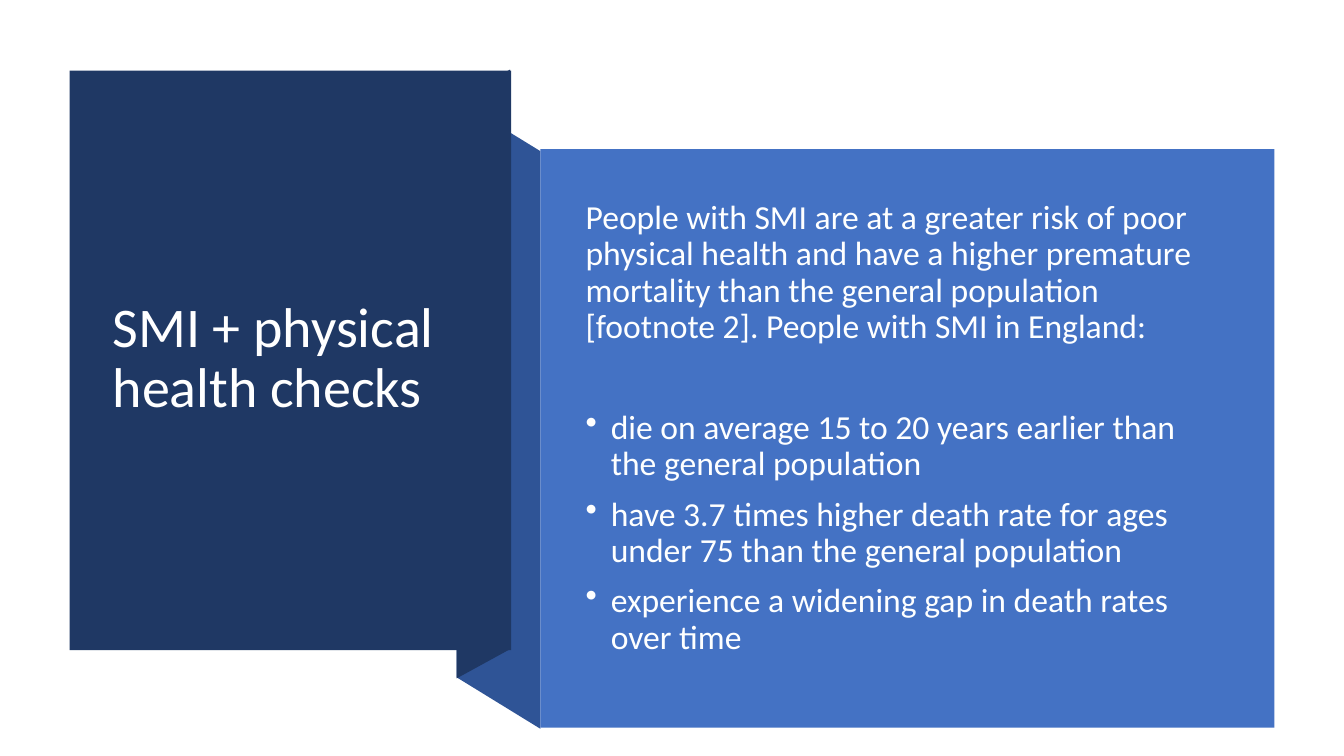
from pptx import Presentation
from pptx.dml.color import RGBColor
from pptx.enum.shapes import MSO_SHAPE
from pptx.enum.text import MSO_ANCHOR
from pptx.oxml.ns import qn
from pptx.util import Inches, Pt
from lxml.etree import SubElement

NAVY = RGBColor(0x1F, 0x38, 0x64)
FOLD = RGBColor(0x2F, 0x54, 0x96)
BLUE = RGBColor(0x44, 0x72, 0xC4)
WHITE = RGBColor(0xFF, 0xFF, 0xFF)
SOFT = RGBColor(0xFE, 0xFF, 0xFF)

TITLE = "SMI + physical health checks"
INTRO = ("People with SMI are at a greater risk of poor physical health and "
         "have a higher premature mortality than the general population "
         "[footnote 2]. People with SMI in England:")
FACTS = [
    "die on average 15 to 20 years earlier than the general population",
    "have 3.7 times higher death rate for ages under 75 than the general population",
    "experience a widening gap in death rates over time",
]


def paint(shape, color):
    shape.shadow.inherit = False
    shape.fill.solid()
    shape.fill.fore_color.rgb = color
    shape.line.fill.background()


def add_rect(slide, box, color):
    rect = slide.shapes.add_shape(MSO_SHAPE.RECTANGLE, *map(Inches, box))
    paint(rect, color)


def add_fold(slide, box, slant, color):
    left, top, width, height = box
    right, bottom = left + width, top + height
    rise, drop = max(-slant, 0), max(slant, 0)
    points = [(right, bottom - rise), (left, bottom - drop),
              (left, top + rise), (right, top + drop)]
    points = [(Inches(x), Inches(y)) for x, y in points]
    form = slide.shapes.build_freeform(*points[0])
    form.add_line_segments(points[1:], close=True)
    paint(form.convert_to_shape(), color)


def add_text(slide, box, lines, size, color):
    frame = slide.shapes.add_textbox(*map(Inches, box)).text_frame
    frame.word_wrap = True
    frame.vertical_anchor = MSO_ANCHOR.MIDDLE
    frame.text = "\n".join(lines)
    for para in frame.paragraphs:
        para.line_spacing = 0.9
        para.font.name = "Calibri"
        para.font.size = Pt(size)
        para.font.color.rgb = color
    return frame


def add_bullet(para):
    props = para._p.get_or_add_pPr()
    props.set("marL", str(Inches(0.25)))
    props.set("indent", str(Inches(-0.25)))
    mark = SubElement(props, qn("a:buChar"))
    mark.set("char", "•")
    props.remove(mark)
    props.insert_element_before(mark, "a:tabLst", "a:defRPr", "a:extLst")
    para.space_before = Pt(10)


def add_title(slide, box):
    left, top, width, height = box
    add_rect(slide, box, NAVY)
    add_text(slide, (left + 0.33, top + 0.37, width - 0.66, height - 0.76),
             [TITLE], 40, WHITE)


def add_body(slide, box):
    left, top, width, height = box
    add_rect(slide, box, BLUE)
    frame = add_text(slide, (left + 0.35, top + 0.4, width - 0.77, height - 1),
                     [INTRO] + FACTS, 24, SOFT)
    facts = frame.paragraphs[1:]
    for para in facts:
        add_bullet(para)
    facts[0].space_before = Pt(46.4)


def main():
    deck = Presentation()
    deck.slide_width, deck.slide_height = Inches(13.33), Inches(7.5)
    slide = deck.slides.add_slide(deck.slide_layouts[6])
    add_fold(slide, (4.53, 0.99, 0.83, 6.24), 0.51, FOLD)
    add_fold(slide, (4.53, 0.69, 0.53, 6.04), -0.29, NAVY)
    add_title(slide, (0.69, 0.7, 4.38, 5.75))
    add_body(slide, (5.36, 1.48, 7.28, 5.74))
    deck.save("out.pptx")


if __name__ == "__main__":
    main()
